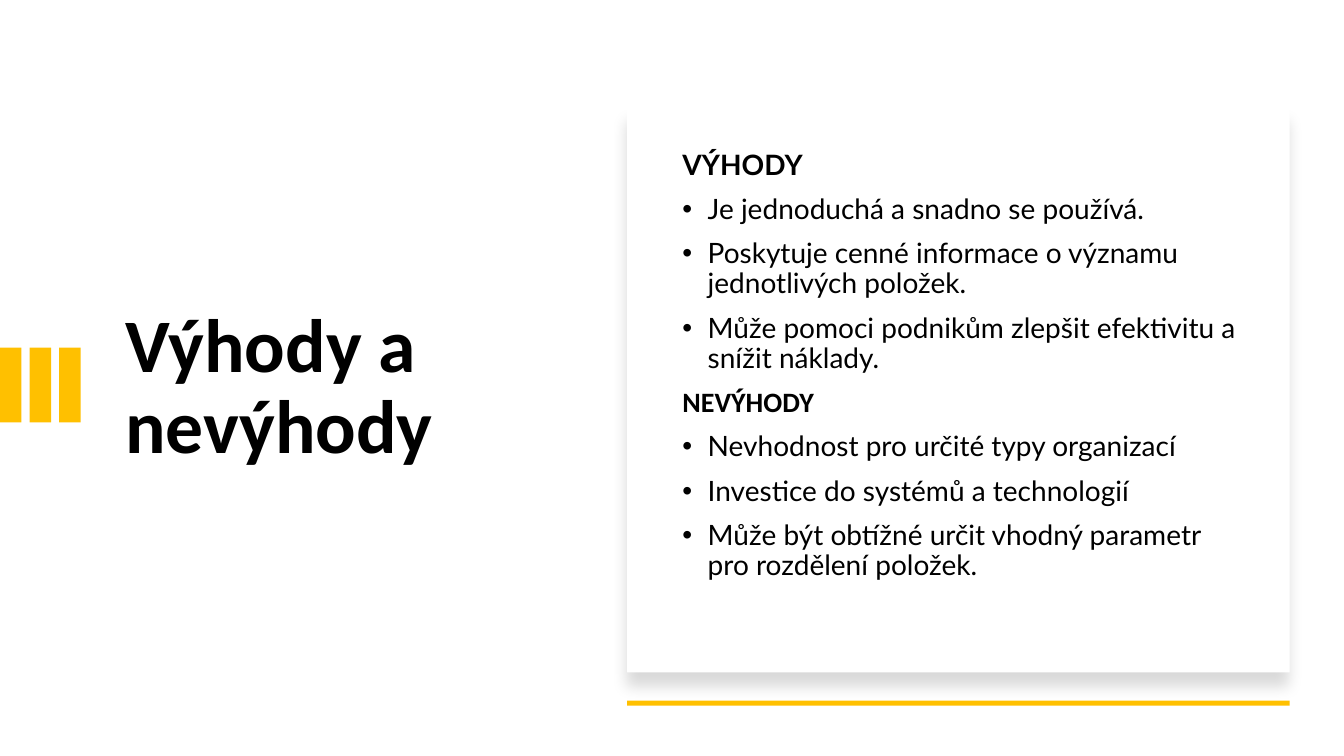
from lxml import etree
from pptx import Presentation
from pptx import util as u
from pptx.dml.color import RGBColor
from pptx.enum import shapes, text
from pptx.oxml.ns import qn

WIDTH, HEIGHT = u.Inches(13.33), u.Inches(7.5)
GOLD, WHITE, BLACK = "FFC000", "FFFFFF", "000000"
PANEL_LEFT, PANEL_WIDTH = 46.66, 49.29
CONTENT_TOP, CONTENT_HEIGHT = 20, 62.8
BAR_COUNT, BAR_STEP = 3, 2.2
SECTIONS = [
    ("VÝHODY", "Lato", [
        "Je jednoduchá a snadno se používá.",
        "Poskytuje cenné informace o významu jednotlivých položek.",
        "Může pomoci podnikům zlepšit efektivitu a snížit náklady.",
    ]),
    ("NEVÝHODY", "Calibri", [
        "Nevhodnost pro určité typy organizací",
        "Investice do systémů a technologií",
        "Může být obtížné určit vhodný parametr pro rozdělení položek.",
    ]),
]


def color(value):
    """Turn a hex string into a colour."""
    return RGBColor.from_string(value)


def area(left, top, width, height):
    """Turn percentages of the slide into a position and size."""
    return [int(size * share / 100) for size, share in
            zip((WIDTH, HEIGHT, WIDTH, HEIGHT), (left, top, width, height))]


def add_block(slide, place, fill):
    """Add a plain filled rectangle."""
    sp = slide.shapes.add_shape(shapes.MSO_SHAPE.RECTANGLE, *area(*place))
    sp.shadow.inherit = False
    sp.fill.solid()
    sp.fill.fore_color.rgb = color(fill)
    sp.line.fill.background()
    return sp


def add_shadow(sp, blur, distance, opacity):
    """Give a shape a soft shadow that falls straight down."""
    effects = sp._element.spPr.find(qn("a:effectLst"))
    shadow = etree.SubElement(
        effects, qn("a:outerShdw"), blurRad=str(u.Pt(blur)),
        dist=str(u.Pt(distance)), dir="5400000", algn="t", rotWithShape="0")
    tint = etree.SubElement(shadow, qn("a:srgbClr"), val=BLACK)
    etree.SubElement(tint, qn("a:alpha"), val=str(opacity * 1000))


def format_paragraph(p, size, font, bold):
    """Set the spacing and the font of a paragraph."""
    p.alignment = text.PP_ALIGN.LEFT
    p.line_spacing = 0.9
    for r in p.runs:
        r.font.size = u.Pt(size)
        r.font.name = font
        r.font.bold = bold
        r.font.color.rgb = color(BLACK)


def add_bullet(p):
    """Give a paragraph a bullet with a hanging indent."""
    pPr = p._p.get_or_add_pPr()
    pPr.set("marL", str(u.Inches(0.25)))
    pPr.set("indent", str(-u.Inches(0.25)))
    etree.SubElement(pPr, qn("a:buFont"), typeface="Arial")
    etree.SubElement(pPr, qn("a:buChar"), char="•")


def set_title(slide, words):
    """Place and format the slide title."""
    title = slide.shapes.title
    title.left, title.top, title.width, title.height = area(
        8.55, CONTENT_TOP, 31.96, CONTENT_HEIGHT)
    tf = title.text_frame
    tf.text = words
    tf.word_wrap = True
    tf.vertical_anchor = text.MSO_ANCHOR.MIDDLE
    format_paragraph(tf.paragraphs[0], 54, "Calibri", True)


def add_sections(slide, sections):
    """Add headings, each followed by its bulleted points."""
    sp = slide.shapes.add_textbox(
        *area(50.04, CONTENT_TOP, 42.84, CONTENT_HEIGHT))
    tf = sp.text_frame
    tf.word_wrap = True
    tf.vertical_anchor = text.MSO_ANCHOR.MIDDLE
    tf.margin_bottom = u.Inches(0.49)
    lines = []
    for heading, font, points in sections:
        lines.append((heading, font, True))
        lines += [(point, "Lato", False) for point in points]
    for i, (words, font, is_heading) in enumerate(lines):
        p = tf.add_paragraph() if i else tf.paragraphs[0]
        p.text = words
        format_paragraph(p, 20, font, is_heading)
        p.space_before = u.Pt(10)
        if not is_heading:
            add_bullet(p)


def main():
    """Build the slide and save it."""
    prs = Presentation()
    prs.slide_width, prs.slide_height = WIDTH, HEIGHT
    slide = prs.slides.add_slide(prs.slide_layouts[5])
    set_title(slide, "Výhody a nevýhody")
    for i in range(BAR_COUNT):
        add_block(slide, (i * BAR_STEP, 46, 1.6, 9.87), GOLD)
    card = add_block(slide, (PANEL_LEFT, 14.27, PANEL_WIDTH, 74.67), WHITE)
    add_shadow(card, blur=11, distance=10, opacity=15)
    add_sections(slide, SECTIONS)
    add_block(slide, (PANEL_LEFT, 92.67, PANEL_WIDTH, 0.67), GOLD)
    prs.save("out.pptx")


if __name__ == "__main__":
    main()
